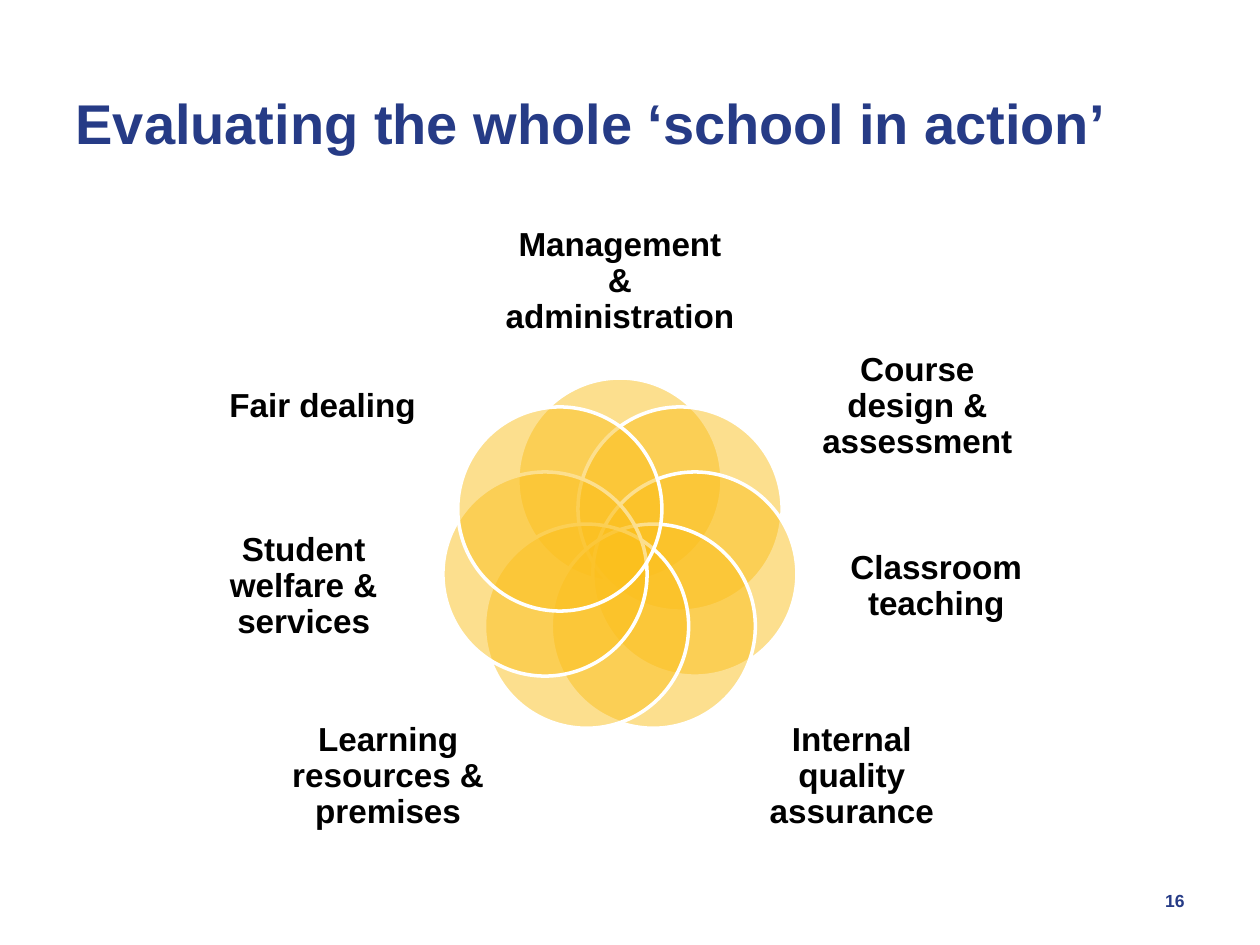
from math import cos, pi, sin

from lxml.etree import SubElement
from pptx import Presentation
from pptx.dml.color import RGBColor
from pptx.enum.shapes import MSO_SHAPE as Shape
from pptx.enum.text import MSO_ANCHOR as Anchor, MSO_AUTO_SIZE as Fit, PP_ALIGN as Align
from pptx.oxml.ns import qn
from pptx.util import Inches, Pt

# Content
TITLE = "Evaluating the whole ‘school in action’"
PAGE = "16"
AREAS = [
    "Management & administration",
    "Course design & assessment",
    "Classroom teaching",
    "Internal quality assurance",
    "Learning resources & premises",
    "Student welfare & services",
    "Fair dealing",
]
NAVY, GOLD, WHITE, BLACK = "263B86", "FBC01E", "FFFFFF", "000000"

# Ring of circles, in inches
MID_X, MID_Y = 4.92, 4.42
RING, SIZE = 0.61, 1.62
# Label rows: offset of the box's middle from the axis, top, width, height
ROWS = [
    (0, 1.74, 1.85, 0.99),
    (2.36, 2.68, 1.75, 1.09),
    (2.51, 4.07, 1.72, 1.17),
    (1.84, 5.63, 1.85, 1.07),
]


def color(code):
    return RGBColor.from_string(code)


def place(shape, *box):
    shape.left, shape.top, shape.width, shape.height = map(Inches, box)


def write(shape, text, size, code, align, space=None):
    frame = shape.text_frame
    frame.word_wrap = True
    frame.auto_size = Fit.NONE
    frame.vertical_anchor = Anchor.MIDDLE
    para = frame.paragraphs[0]
    para.alignment = align
    para.line_spacing = space
    run = para.add_run()
    run.text = text
    font = run.font
    font.name, font.size, font.bold = "Arial", Pt(size), True
    font.color.rgb = color(code)
    return frame


def add_petal(group, angle):
    left = MID_X + RING * sin(angle) - SIZE / 2
    top = MID_Y - RING * cos(angle) - SIZE / 2
    petal = group.shapes.add_shape(
        Shape.OVAL, *map(Inches, (left, top, SIZE, SIZE)))
    petal.shadow.inherit = False
    petal.fill.solid()
    petal.fill.fore_color.rgb = color(GOLD)
    tint = petal.fill._xPr.find(qn("a:solidFill"))[0]
    SubElement(tint, qn("a:alpha"), val="50000")
    petal.line.color.rgb = color(WHITE)
    petal.line.width = Pt(2)


def add_label(group, text, index):
    # The left side mirrors the right side
    row = min(index, len(AREAS) - index)
    shift, top, width, height = ROWS[row]
    side = 1 if index == row else -1
    left = MID_X + side * shift - width / 2
    label = group.shapes.add_textbox(*map(Inches, (left, top, width, height)))
    frame = write(label, text, 19, BLACK, Align.CENTER, 0.9)
    frame.margin_left = frame.margin_right = 0
    frame.margin_top = frame.margin_bottom = 0


def main():
    deck = Presentation()
    deck.slide_width, deck.slide_height = Inches(10), Inches(7.5)
    slide = deck.slides.add_slide(deck.slide_layouts[5])

    # Title
    title = slide.shapes.title
    place(title, 0.5, 0.55, 8.75, 0.9)
    write(title, TITLE, 32, NAVY, Align.LEFT, 0.9)

    # Diagram
    group = slide.shapes.add_group_shape()
    for index, area in enumerate(AREAS):
        add_petal(group, 2 * pi * index / len(AREAS))
        add_label(group, area, index)

    # Page number
    page = slide.shapes.add_textbox(0, 0, 0, 0)
    place(page, 7.17, 6.95, 2.33, 0.4)
    write(page, PAGE, 10, NAVY, Align.RIGHT)

    deck.save("out.pptx")


if __name__ == "__main__":
    main()
